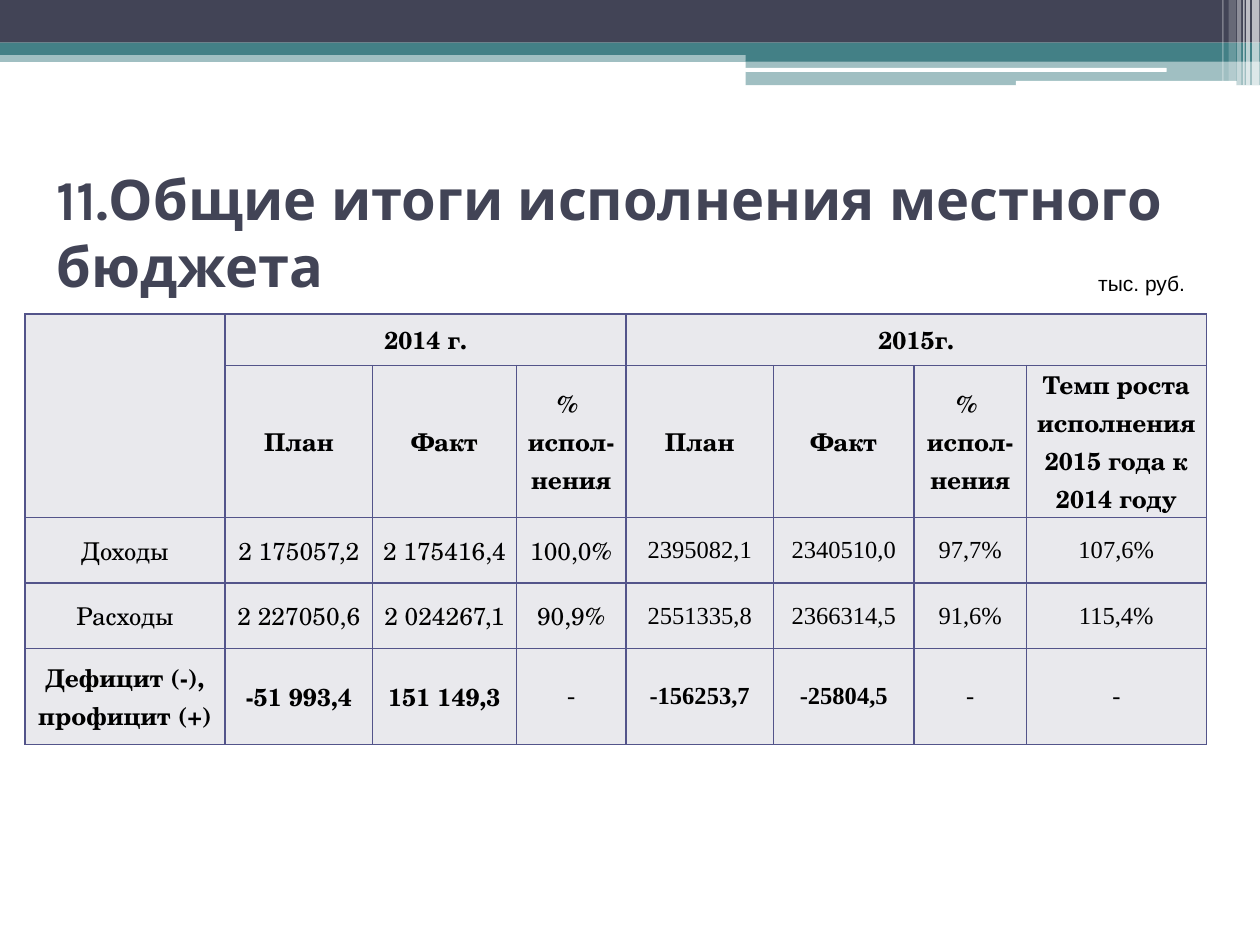
from typing import NamedTuple

from lxml import etree
from pptx import Presentation
from pptx.dml.color import RGBColor
from pptx.enum.shapes import MSO_SHAPE
from pptx.enum.text import MSO_ANCHOR, PP_ALIGN
from pptx.oxml.ns import qn
from pptx.util import Cm, Pt

RECT = MSO_SHAPE.RECTANGLE
ROUNDED = MSO_SHAPE.ROUNDED_RECTANGLE
MIDDLE = MSO_ANCHOR.MIDDLE
CENTER = PP_ALIGN.CENTER
COLORS = {
    "navy": "424456", "teal": "438086", "white": "FFFFFF",
    "cell": "E9E9ED", "border": "53548A", "text": "000000",
}
SCHOLA = "TeX Gyre Schola"
TIMES = "Times New Roman"


class Band(NamedTuple):
    left: float
    top: float
    width: float
    height: float
    color: str
    opacity: int = 100
    preset: MSO_SHAPE = RECT


class Entry(NamedTuple):
    text: str
    font: str = SCHOLA
    bold: bool = False


BANDS = [
    Band(0, 1.02, 25.4, 0.23, "teal", 50),
    Band(0, 0, 25.4, 0.86, "navy"),
    Band(0, 0.86, 25.4, 0.25, "teal"),
    Band(15.03, 0.99, 10.37, 0.25, "teal"),
    Band(15.03, 1.22, 10.37, 0.5, "teal", 50),
    Band(15.02, 1.37, 8.5, 0.08, "white", preset=ROUNDED),
    Band(20.48, 1.63, 4.45, 0.1, "white", preset=ROUNDED),
    Band(25.24, 0, 0.15, 1.72, "white", 65),
    Band(25.12, 0, 0.08, 1.72, "white", 65),
    Band(25.06, 0, 0.03, 1.72, "white", 60),
    Band(24.94, 0, 0.08, 1.72, "white", 40),
    Band(24.77, 0, 0.15, 1.63, "white", 20),
    Band(24.64, 0, 0.03, 1.63, "white", 30),
]
COLUMN_WIDTHS = [4.04, 2.97, 2.9, 2.21, 2.97, 2.84, 2.26, 3.63]
ROW_HEIGHTS = [1.04, 2.77, 1.32, 1.32, 1.93]
SPANS = [(0, 0, 1, 0), (0, 1, 0, 3), (0, 4, 0, 7)]
YEAR_HEADERS = ["План", "Факт", "% \nиспол-нения"]
GROWTH_HEADER = "Темп роста исполнения 2015 года к 2014 году"
INCOME = ["Доходы", "2 175057,2", "2 175416,4", "100,0%",
          "2395082,1", "2340510,0", "97,7%", "107,6%"]
EXPENSES = ["Расходы", "2 227050,6", "2 024267,1", "90,9%",
            "2551335,8", "2366314,5", "91,6%", "115,4%"]
BALANCE = ["Дефицит (-), профицит (+)", "-51 993,4", "151 149,3", "-",
           "-156253,7", "-25804,5", "-", "-"]


def rgb(name: str) -> RGBColor:
    return RGBColor.from_string(COLORS[name])


def style_font(font, name: str, size: int, color: str, bold: bool = False) -> None:
    font.name, font.size, font.bold = name, Pt(size), bold
    font.color.rgb = rgb(color)


def draw_band(slide, band: Band) -> None:
    box = map(Cm, (band.left, band.top, band.width, band.height))
    bar = slide.shapes.add_shape(band.preset, *box)
    bar.shadow.inherit = False
    bar.line.fill.background()
    bar.fill.solid()
    bar.fill.fore_color.rgb = rgb(band.color)
    if band.opacity < 100:
        color = next(bar.fill._xPr.iter(qn("a:srgbClr")))
        etree.SubElement(color, qn("a:alpha"), val=str(band.opacity * 1000))


def draw_borders(cell) -> None:
    properties = cell._tc.get_or_add_tcPr()
    for position, side in enumerate(("a:lnL", "a:lnR", "a:lnT", "a:lnB")):
        line = etree.Element(qn(side), w=str(Pt(1)))
        fill = etree.SubElement(line, qn("a:solidFill"))
        etree.SubElement(fill, qn("a:srgbClr"), val=COLORS["border"])
        properties.insert(position, line)


def fill_cell(cell, entry: Entry) -> None:
    cell.fill.solid()
    cell.fill.fore_color.rgb = rgb("cell")
    draw_borders(cell)
    cell.vertical_anchor = MIDDLE
    cell.margin_left = cell.margin_right = Cm(0.13)
    cell.margin_top = cell.margin_bottom = 0
    cell.text = entry.text
    for paragraph in cell.text_frame.paragraphs:
        paragraph.alignment = CENTER
        style_font(paragraph.font, entry.font, 14, "text", entry.bold)


def budget_rows() -> list[list[Entry]]:
    years = ["", "2014 г.", "", "", "2015г.", "", "", ""]
    measures = ["", *YEAR_HEADERS * 2, GROWTH_HEADER]
    rows = [[Entry(text, bold=True) for text in row] for row in (years, measures)]
    for row in (INCOME, EXPENSES, BALANCE):
        rows.append([
            Entry(text, TIMES if column > 3 or text == "-" else SCHOLA,
                  row is BALANCE and text != "-")
            for column, text in enumerate(row)
        ])
    return rows


def draw_budget(slide) -> None:
    budget = slide.shapes.add_table(
        len(ROW_HEIGHTS), len(COLUMN_WIDTHS), Cm(0.5), Cm(6.33),
        Cm(sum(COLUMN_WIDTHS)), Cm(sum(ROW_HEIGHTS))).table
    for column, width in zip(budget.columns, COLUMN_WIDTHS):
        column.width = Cm(width)
    for row, height in zip(budget.rows, ROW_HEIGHTS):
        row.height = Cm(height)
    for row, entries in zip(budget.rows, budget_rows()):
        for cell, entry in zip(row.cells, entries):
            fill_cell(cell, entry)
    for top, left, bottom, right in SPANS:
        budget.cell(top, left).merge(budget.cell(bottom, right))


def draw_title(slide) -> None:
    title = slide.shapes.title
    title.left, title.top, title.width, title.height = map(Cm, (0.89, 3.18, 23.24, 2.97))
    title.text_frame.text = "11.Общие итоги исполнения местного бюджета"
    title.text_frame.vertical_anchor = MIDDLE
    heading = title.text_frame.paragraphs[0]
    heading.alignment = PP_ALIGN.LEFT
    style_font(heading.font, "Karla", 32, "navy", True)


def draw_unit(slide) -> None:
    unit = slide.shapes.add_textbox(Cm(21.89), Cm(5.33), Cm(2.29), Cm(0.76))
    unit.text_frame.word_wrap = True
    unit.text_frame.vertical_anchor = MIDDLE
    unit.text_frame.text = "тыс. руб."
    style_font(unit.text_frame.paragraphs[0].font, "Arial", 12, "text")


def main() -> None:
    """Build the slide on the overall results of the local budget."""
    presentation = Presentation()
    presentation.slide_width, presentation.slide_height = Cm(25.4), Cm(19.05)
    slide = presentation.slides.add_slide(presentation.slide_layouts[5])
    for band in BANDS:
        draw_band(slide, band)
    draw_title(slide)
    draw_budget(slide)
    draw_unit(slide)
    presentation.save("out.pptx")


if __name__ == "__main__":
    main()
